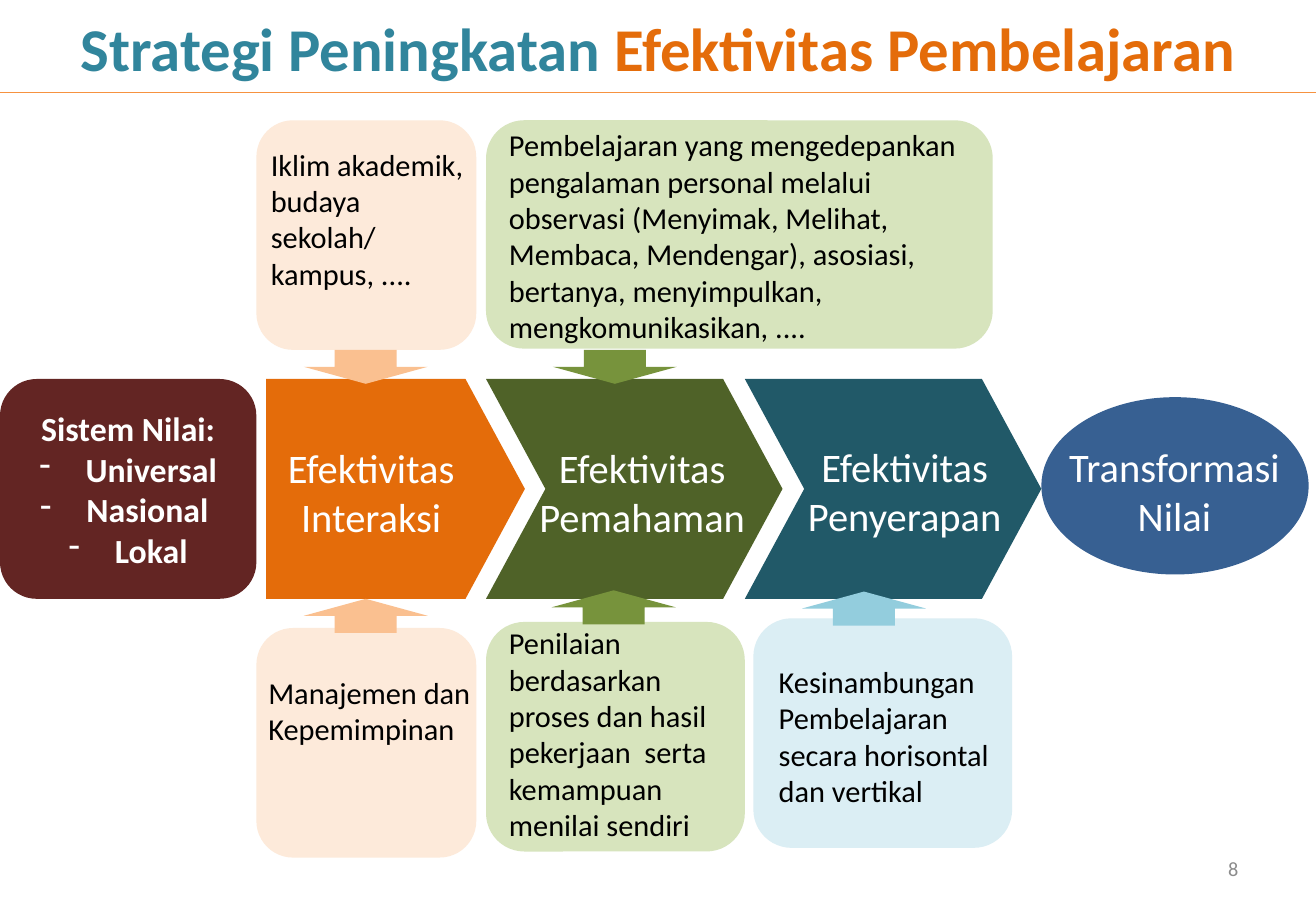
from dataclasses import dataclass

from lxml import etree
from pptx import Presentation
from pptx.dml.color import RGBColor
from pptx.enum.shapes import MSO_CONNECTOR, MSO_SHAPE
from pptx.enum.text import MSO_ANCHOR, PP_ALIGN
from pptx.oxml.ns import qn
from pptx.util import Inches, Pt

ROUNDED, ELLIPSE = MSO_SHAPE.ROUNDED_RECTANGLE, MSO_SHAPE.OVAL
PENTAGON, CHEVRON = MSO_SHAPE.PENTAGON, MSO_SHAPE.CHEVRON
DOWN, UP = MSO_SHAPE.DOWN_ARROW, MSO_SHAPE.UP_ARROW
STRAIGHT = MSO_CONNECTOR.STRAIGHT
LEFT, CENTER, RIGHT = PP_ALIGN.LEFT, PP_ALIGN.CENTER, PP_ALIGN.RIGHT
TOP, MIDDLE = MSO_ANCHOR.TOP, MSO_ANCHOR.MIDDLE

COLUMNS, ROWS = 108.3, 75
CELL = Inches(0.1)


@dataclass(frozen=True)
class Theme:
    font: str = "Calibri"
    title: int = 36
    step: int = 24
    values: int = 20
    body: int = 18
    number: int = 12
    white: str = "FFFFFF"
    black: str = "000000"
    gray: str = "8C8C8C"
    rule: str = "F69240"
    teal: str = "31859C"
    orange: str = "E46C0A"
    maroon: str = "632523"
    olive: str = "4F6228"
    petrol: str = "215968"
    blue: str = "376092"
    peach: str = "FDEADA"
    apricot: str = "FAC090"
    sage: str = "D7E4BD"
    green: str = "77933C"
    ice: str = "DBEEF4"
    sky: str = "93CDDD"


THEME = Theme()


@dataclass(frozen=True)
class Box:
    left: float
    top: float
    width: float
    height: float

    def inside(self, left, top, width, height):
        return Box(self.left + left, self.top + top, width, height)

    def lengths(self):
        return [round(n * CELL) for n in (self.left, self.top, self.width, self.height)]


def add_block(page, kind, box, color, adjustment=None):
    block = page.shapes.add_shape(kind, *box.lengths())
    block.shadow.inherit = False
    block.fill.solid()
    block.fill.fore_color.rgb = RGBColor.from_string(color)
    block.line.fill.background()
    if adjustment is not None:
        block.adjustments[0] = adjustment
    return block


def add_span(para, text, size, color, bold=False):
    span = para.add_run()
    span.text = text
    span.font.name = THEME.font
    span.font.size = Pt(size)
    span.font.bold = bold
    span.font.color.rgb = RGBColor.from_string(color)


def add_label(page, box, spans, size, align=LEFT, anchor=TOP, bold=False):
    frame = page.shapes.add_textbox(*box.lengths()).text_frame
    frame.word_wrap = True
    frame.vertical_anchor = anchor
    para = frame.paragraphs[0]
    para.alignment = align
    for text, color in spans:
        add_span(para, text, size, color, bold)


def add_dash(para):
    properties = para._p.get_or_add_pPr()
    properties.set("marL", str(Inches(0.38)))
    properties.set("indent", str(-Inches(0.38)))
    etree.SubElement(properties, qn("a:buChar")).set("char", "-")


def draw_header(page, box):
    spans = [("Strategi Peningkatan ", THEME.teal),
             ("Efektivitas Pembelajaran", THEME.orange)]
    add_label(page, box.inside(0, 0.5, box.width, 6.7), spans,
              THEME.title, CENTER, MIDDLE, True)
    left, top, width, height = box.lengths()
    rule = page.shapes.add_connector(STRAIGHT, left, top + height, left + width, top + height)
    rule.line.color.rgb = RGBColor.from_string(THEME.rule)
    rule.line.width = Pt(0.75)
    etree.SubElement(rule._element.spPr, qn("a:effectLst"))


def draw_values(page, box):
    frame = add_block(page, ROUNDED, box, THEME.maroon).text_frame
    frame.word_wrap = True
    frame.vertical_anchor = MIDDLE
    for index, text in enumerate(["Sistem Nilai:", "Universal", "Nasional ", "Lokal"]):
        para = frame.add_paragraph() if index else frame.paragraphs[0]
        para.alignment = CENTER
        if index:
            add_dash(para)
        add_span(para, text, THEME.values, THEME.white, True)


def draw_process(page, box):
    draw_values(page, box.inside(0, 0, 21.1, box.height))
    steps = [
        (ELLIPSE, 85.7, 1.5, 22, 14.6, THEME.blue, None,
         "Transformasi Nilai", 85.7, 4.7, 21.9),
        (PENTAGON, 21.9, 0, 21.3, box.height, THEME.orange, 0.27,
         "Efektivitas Interaksi", 21.9, 4.8, 17.3),
        (CHEVRON, 40, 0, 24.4, box.height, THEME.olive, 0.27,
         "Efektivitas Pemahaman", 43.1, 4.8, 19.5),
        (CHEVRON, 61.3, 0, 24.4, box.height, THEME.petrol, 0.27,
         "Efektivitas Penyerapan", 64.4, 4.7, 20.1),
    ]
    for (kind, left, top, width, height, color, point,
         text, text_left, text_top, text_width) in steps:
        add_block(page, kind, box.inside(left, top, width, height), color, point)
        add_label(page, box.inside(text_left, text_top, text_width, 9.1),
                  [(text, THEME.white)], THEME.step, CENTER)


def draw_card(page, box, fill, text, text_box, arrow, arrow_box, arrow_fill):
    add_block(page, ROUNDED, box, fill)
    add_label(page, box.inside(*text_box), [(text, THEME.black)], THEME.body)
    add_block(page, arrow, box.inside(*arrow_box, 10.2, 2.8), arrow_fill)


def draw_cards(page):
    cards = [
        (Box(21.1, 9.9, 18.1, 18.9), THEME.peach,
         "Iklim akademik, budaya sekolah/ kampus, ....",
         (0.2, 1.6, 17.9, 13.1), DOWN, (3.9, 18.9), THEME.apricot),
        (Box(40, 9.9, 41.7, 18.8), THEME.sage,
         "Pembelajaran yang mengedepankan pengalaman personal melalui observasi "
         "(Menyimak, Melihat, Membaca, Mendengar), asosiasi, bertanya, "
         "menyimpulkan,  mengkomunikasikan, ....",
         (0.9, 0, 40.8, 19.2), DOWN, (5.5, 18.9), THEME.green),
        (Box(21.1, 51.7, 18.1, 18.9), THEME.peach,
         "Manajemen dan Kepemimpinan",
         (0, 3.3, 18.6, 10.1), UP, (3.9, -2.4), THEME.apricot),
        (Box(40, 51.2, 21.3, 18.9), THEME.sage,
         "Penilaian berdasarkan proses dan hasil pekerjaan  serta kemampuan "
         "menilai sendiri",
         (0.9, -0.3, 21.7, 19.2), UP, (5.4, -2.6), THEME.green),
        (Box(62, 50.9, 21.3, 18.9), THEME.ice,
         "Kesinambungan Pembelajaran secara horisontal dan vertikal",
         (1.1, 3.2, 22.5, 13.1), UP, (4, -2.2), THEME.sky),
    ]
    for card in cards:
        draw_card(page, *card)


def main():
    deck = Presentation()
    deck.slide_width, deck.slide_height = round(COLUMNS * CELL), ROWS * CELL
    page = deck.slides.add_slide(deck.slide_layouts[6])
    draw_header(page, Box(0, 0, COLUMNS, 7.6))
    draw_process(page, Box(0, 31.2, COLUMNS, 18.1))
    draw_cards(page)
    add_label(page, Box(77.6, 69.5, 25.3, 4), [("8", THEME.gray)],
              THEME.number, RIGHT, MIDDLE)
    deck.save("out.pptx")


if __name__ == "__main__":
    main()
